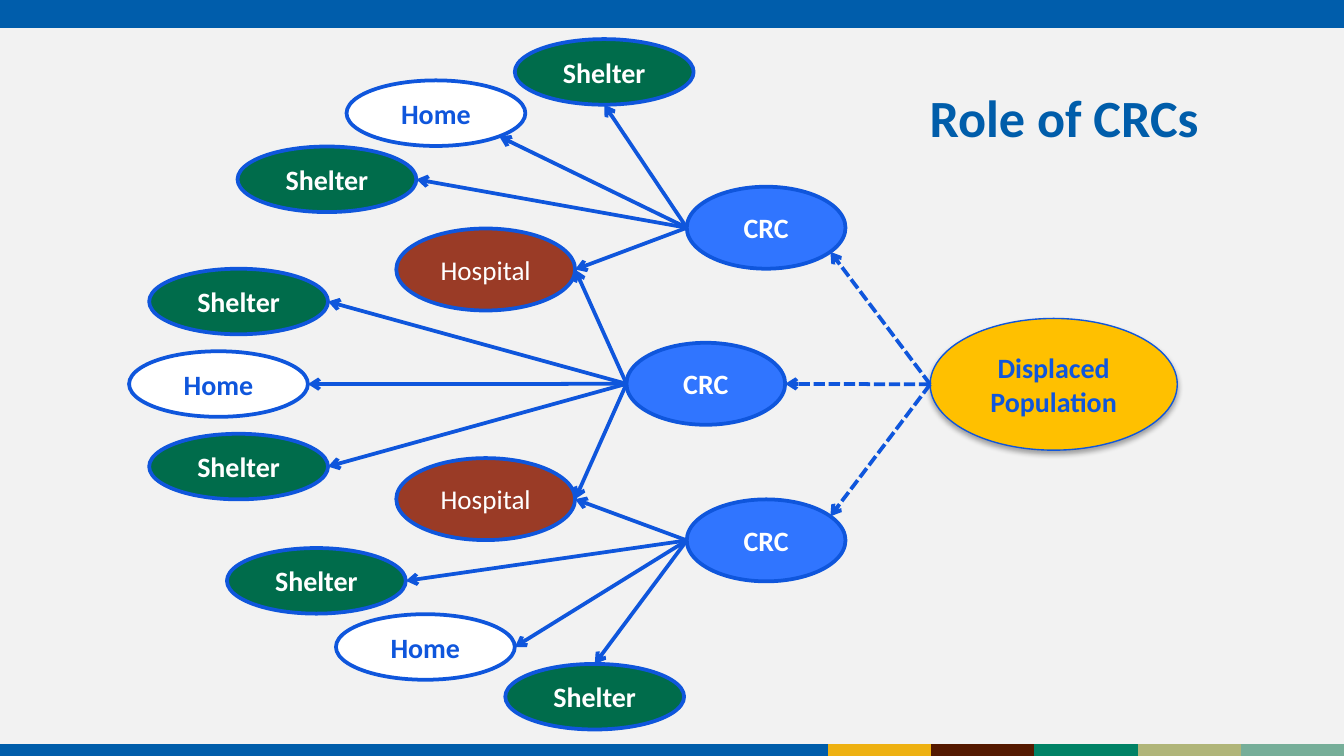
from dataclasses import dataclass
from math import cos, radians, sin

from lxml.etree import SubElement
from pptx import Presentation
from pptx.dml.color import RGBColor
from pptx.enum.dml import MSO_LINE
from pptx.enum.shapes import MSO_CONNECTOR, MSO_SHAPE
from pptx.enum.text import MSO_ANCHOR, PP_ALIGN
from pptx.oxml.ns import qn
from pptx.util import Cm, Pt


@dataclass(frozen=True)
class Theme:
    font: str = "Calibri"
    title_size: float = 28
    label_size: float = 15
    hospital_size: float = 14.5
    background: str = "F2F2F2"
    banner: str = "005DAB"
    title: str = "005DAA"
    outline: str = "0F56DC"
    white: str = "FFFFFF"
    crc: str = "3075FF"
    shelter: str = "006C4B"
    hospital: str = "9A3B26"
    population: str = "FFC000"
    stripes: tuple = ("EEB111", "541900", "008265", "B0B579", "76AE99")


THEME = Theme()
SLIDE_W, SLIDE_H = 25.4, 14.29

# Angles on an ellipse, clockwise from its right end
RIGHT, BOTTOM, LEFT, TOP = 0, 90, 180, 270


def apply_format(target, values):
    for name, value in values.items():
        setattr(target, name, value)


def rim(ellipse, angle):
    """Point on the rim of an ellipse, in cm."""
    a, b = ellipse.width.cm / 2, ellipse.height.cm / 2
    return (ellipse.left.cm + a + a * cos(radians(angle)),
            ellipse.top.cm + b + b * sin(radians(angle)))


class DiagramSlide:
    def __init__(self, presentation, theme):
        self.theme = theme
        self.slide = presentation.slides.add_slide(presentation.slide_layouts[6])
        self.paint(self.slide.background.fill, theme.background)

    def paint(self, fill, color):
        fill.solid()
        fill.fore_color.rgb = RGBColor.from_string(color)

    def label(self, shape, text, size, color, bold, align):
        frame = shape.text_frame
        margin = Cm(0.25)
        apply_format(frame, {"word_wrap": True, "vertical_anchor": MSO_ANCHOR.MIDDLE,
                             "margin_left": margin, "margin_right": margin})
        paragraph = frame.paragraphs[0]
        paragraph.alignment = align
        run = paragraph.add_run()
        run.text = text
        apply_format(run.font, {"name": self.theme.font, "size": Pt(size), "bold": bold})
        run.font.color.rgb = RGBColor.from_string(color)

    def title(self, text, left, top, width, height):
        box = self.slide.shapes.add_textbox(Cm(left), Cm(top), Cm(width), Cm(height))
        self.label(box, text, self.theme.title_size, self.theme.title, True, PP_ALIGN.LEFT)

    def banner(self, height):
        bar = self.slide.shapes.add_shape(MSO_SHAPE.RECTANGLE, 0, 0, Cm(SLIDE_W), Cm(height))
        bar.shadow.inherit = False
        self.paint(bar.fill, self.theme.banner)
        bar.line.fill.background()

    def ellipse(self, text, left, top, width, height, fill, color,
                size=None, bold=True, weight=2):
        node = self.slide.shapes.add_shape(
            MSO_SHAPE.OVAL, Cm(left), Cm(top), Cm(width), Cm(height))
        node.shadow.inherit = False
        self.paint(node.fill, fill)
        node.line.width = Pt(weight)
        node.line.color.rgb = RGBColor.from_string(self.theme.outline)
        self.label(node, text, size or self.theme.label_size, color, bold, PP_ALIGN.CENTER)
        return node

    def soft_shadow(self, node):
        effects = node._element.spPr.find(qn("a:effectLst"))
        shadow = SubElement(effects, qn("a:outerShdw"), blurRad=str(Pt(3.1)),
                            dist=str(Pt(1.8)), dir="5400000", rotWithShape="0")
        black = SubElement(shadow, qn("a:srgbClr"), val="000000")
        SubElement(black, qn("a:alpha"), val="35000")

    def line(self, start, end, color, weight):
        connector = self.slide.shapes.add_connector(
            MSO_CONNECTOR.STRAIGHT, *(Cm(value) for value in (*start, *end)))
        connector.line.width = Pt(weight)
        connector.line.color.rgb = RGBColor.from_string(color)
        SubElement(connector._element.spPr, qn("a:effectLst"))
        return connector

    def arrow(self, source, target, angle, dashed=False):
        connector = self.line(rim(source, LEFT), rim(target, angle), self.theme.outline, 2)
        if dashed:
            connector.line.dash_style = MSO_LINE.SQUARE_DOT
        outline = connector._element.spPr.find(qn("a:ln"))
        SubElement(outline, qn("a:tailEnd"), type="arrow")


def main():
    presentation = Presentation()
    apply_format(presentation, {"slide_width": Cm(SLIDE_W), "slide_height": Cm(SLIDE_H)})
    diagram = DiagramSlide(presentation, THEME)

    # Banner and footer stripes
    diagram.banner(0.53)
    footer_y, stripe_start, stripe_w = 14.2, 15.65, 1.95
    diagram.line((0, footer_y), (stripe_start, footer_y), THEME.title, 7.5)
    for index, color in enumerate(THEME.stripes):
        left = stripe_start + index * stripe_w
        diagram.line((left, footer_y), (left + stripe_w, footer_y), color, 7.5)

    diagram.title("Role of CRCs", 17.32, 1.04, 5.87, 2.34)

    # Displaced population and the three centres
    population = diagram.ellipse("Displaced Population", 17.58, 6.02, 4.67, 2.49,
                                 THEME.population, THEME.outline, weight=0.75)
    diagram.soft_shadow(population)
    upper_crc, middle_crc, lower_crc = [
        diagram.ellipse("CRC", left, top, 3, 1.55, THEME.crc, THEME.white)
        for left, top in ((12.98, 3.53), (11.84, 6.48), (12.98, 9.44))]
    for crc, angle in ((upper_crc, 36), (middle_crc, RIGHT), (lower_crc, -36)):
        diagram.arrow(population, crc, angle, dashed=True)

    # Homes and shelters, with the side where the arrow arrives
    looks = {"Home": (THEME.white, THEME.outline), "Shelter": (THEME.shelter, THEME.white)}
    destinations = (
        (upper_crc, "Home", 6.55, 1.52, 45),
        (upper_crc, "Shelter", 4.49, 2.77, RIGHT),
        (upper_crc, "Shelter", 9.73, 0.74, BOTTOM),
        (middle_crc, "Shelter", 2.82, 5.08, RIGHT),
        (middle_crc, "Home", 2.44, 6.64, RIGHT),
        (middle_crc, "Shelter", 2.82, 8.2, RIGHT),
        (lower_crc, "Shelter", 4.29, 10.36, RIGHT),
        (lower_crc, "Home", 6.35, 11.61, RIGHT),
        (lower_crc, "Shelter", 9.55, 12.55, TOP),
    )
    for crc, name, left, top, angle in destinations:
        place = diagram.ellipse(name, left, top, 3.38, 1.24, *looks[name])
        diagram.arrow(crc, place, angle)

    # Hospitals, each shared by two centres
    for top, outer_crc in ((4.32, upper_crc), (8.66, lower_crc)):
        hospital = diagram.ellipse("Hospital", 7.49, top, 3.38, 1.55, THEME.hospital,
                                   THEME.white, size=THEME.hospital_size, bold=False)
        for crc in (outer_crc, middle_crc):
            diagram.arrow(crc, hospital, RIGHT)

    presentation.save("out.pptx")


if __name__ == "__main__":
    main()
